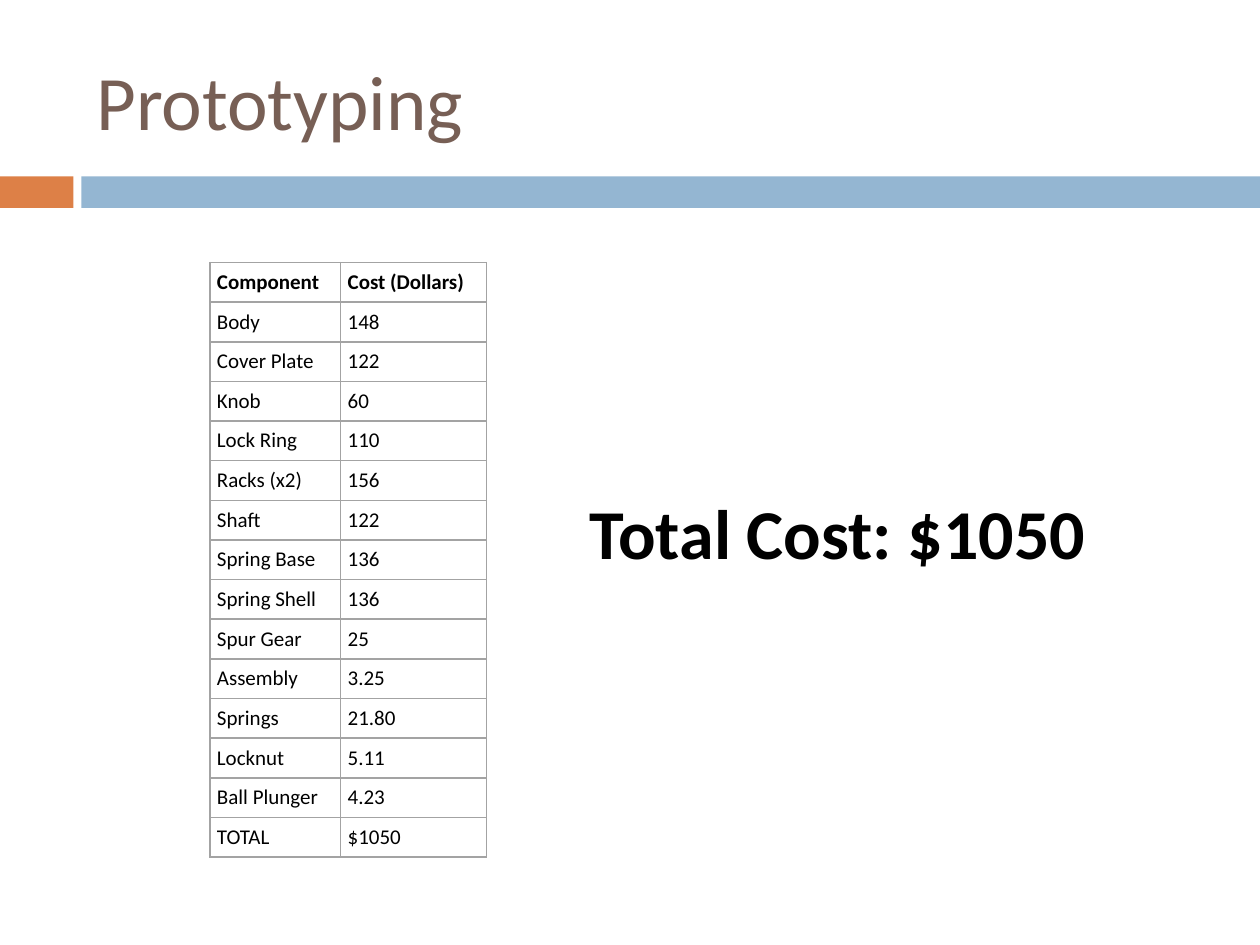
from lxml.etree import SubElement
from pptx import Presentation
from pptx.dml.color import RGBColor
from pptx.enum.shapes import MSO_SHAPE
from pptx.enum.text import MSO_ANCHOR
from pptx.oxml.ns import qn
from pptx.util import Pt

FONT = "Calibri"
COSTS = [
    ("Component", "Cost (Dollars)"),
    ("Body", "148"),
    ("Cover Plate", "122"),
    ("Knob", "60"),
    ("Lock Ring", "110"),
    ("Racks (x2)", "156"),
    ("Shaft", "122"),
    ("Spring Base", "136"),
    ("Spring Shell", "136"),
    ("Spur Gear", "25"),
    ("Assembly", "3.25"),
    ("Springs", "21.80"),
    ("Locknut", "5.11"),
    ("Ball Plunger", "4.23"),
    ("TOTAL", "$1050"),
]


def color(code):
    return RGBColor.from_string(code)


def write(frame, text, size=12, ink="000000", bold=False):
    run = frame.paragraphs[0].add_run()
    run.text = text
    font = run.font
    font.name = FONT
    font.size = Pt(size)
    font.bold = bold
    font.color.rgb = color(ink)


def add_bar(slide, left, top, width, height, fill):
    bar = slide.shapes.add_shape(
        MSO_SHAPE.RECTANGLE, Pt(left), Pt(top), Pt(width), Pt(height))
    bar.shadow.inherit = False
    bar.fill.solid()
    bar.fill.fore_color.rgb = color(fill)
    bar.line.fill.background()


def add_text(slide, left, top, width, height, text, wrap=True,
             anchor=MSO_ANCHOR.TOP, **style):
    box = slide.shapes.add_textbox(Pt(left), Pt(top), Pt(width), Pt(height))
    frame = box.text_frame
    frame.word_wrap = wrap
    frame.vertical_anchor = anchor
    write(frame, text, **style)


def add_edges(cell, ink, width):
    """Draw a line on all four sides; call before the cell gets its fill."""
    props = cell._tc.get_or_add_tcPr()
    for side in ("a:lnL", "a:lnR", "a:lnT", "a:lnB"):
        line = SubElement(props, qn(side), w=str(Pt(width)))
        fill = SubElement(line, qn("a:solidFill"))
        SubElement(fill, qn("a:srgbClr"), val=ink)


def add_costs(slide, left, top, widths, height, pad=4):
    shape = slide.shapes.add_table(
        len(COSTS), len(widths), Pt(left), Pt(top),
        Pt(sum(widths)), Pt(height * len(COSTS)))
    table = shape.table
    table.horz_banding = False
    for column, width in zip(table.columns, widths):
        column.width = Pt(width)
    for r, values in enumerate(COSTS):
        table.rows[r].height = Pt(height)
        for c, value in enumerate(values):
            cell = table.cell(r, c)
            cell.margin_left = cell.margin_right = Pt(pad)
            cell.margin_top = cell.margin_bottom = Pt(pad)
            add_edges(cell, "A3A3A3", 1)
            cell.fill.background()
            write(cell.text_frame, value, bold=r == 0)


def main():
    deck = Presentation()
    deck.slide_width, deck.slide_height = Pt(720), Pt(540)
    slide = deck.slides.add_slide(deck.slide_layouts[6])
    add_bar(slide, 0, 100.8, 42, 18, "DD8047")
    add_bar(slide, 46.5, 100.8, 673.5, 18, "94B6D2")
    add_text(slide, 48, 18, 642, 78, "Prototyping",
             anchor=MSO_ANCHOR.MIDDLE, size=44, ink="775F55")
    add_costs(slide, 120, 150, (74.7, 83.2), 22.65)
    add_text(slide, 330, 276, 306.7, 55.7, "Total Cost: $1050",
             wrap=False, size=40, bold=True)
    deck.save("out.pptx")


if __name__ == "__main__":
    main()
